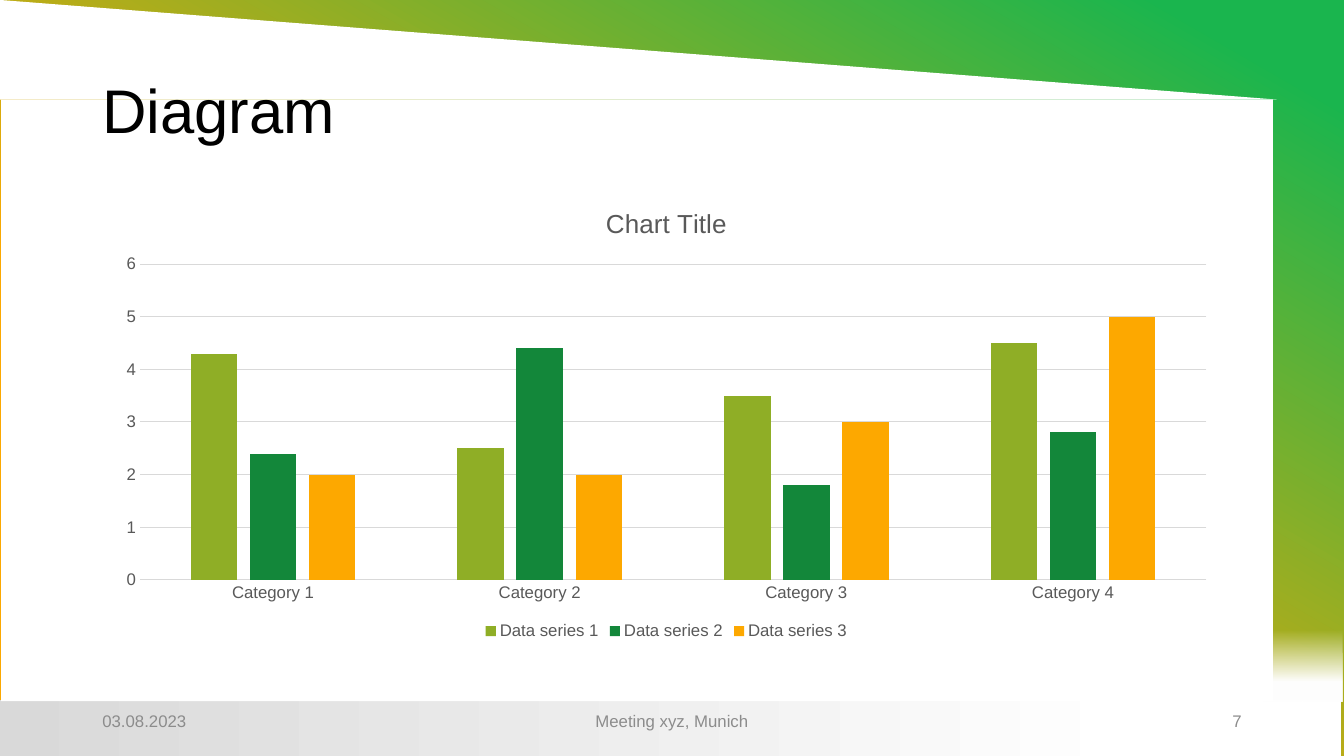
from dataclasses import dataclass
from typing import Any, Optional

import pptx
import pptx.chart.data
import pptx.dml.color
import pptx.enum.chart
import pptx.enum.shapes
import pptx.enum.text
import pptx.oxml
import pptx.oxml.ns
import pptx.util

Cm = pptx.util.Cm
Pt = pptx.util.Pt
SHAPE = pptx.enum.shapes.MSO_SHAPE
ALIGN = pptx.enum.text.PP_ALIGN
ANCHOR = pptx.enum.text.MSO_ANCHOR
CHART = pptx.enum.chart

FONT = "Arial"
CHART_GREY = "595959"
LINE_GREY = "D9D9D9"
FOOTER_GREY = "8C8C8C"


@dataclass
class Stop:
    position: float
    color: str
    alpha: Optional[int] = None


@dataclass
class Backdrop:
    """A background shape; box is left, top, width, height in cm."""
    box: tuple[float, float, float, float]
    color: str = "FFFFFF"
    kind: Any = SHAPE.RECTANGLE
    stops: tuple[Stop, ...] = ()
    angle: float = 0
    rotation: float = 0


@dataclass
class Label:
    text: str
    box: tuple[float, float, float, float]
    align: Any = ALIGN.LEFT
    size: float = 12
    color: str = FOOTER_GREY
    line_spacing: float = 1.0


@dataclass
class Series:
    name: str
    values: tuple[float, ...]
    color: str


BACKDROPS = [
    Backdrop((0, 0, 33.87, 19.05), angle=240,
             stops=(Stop(0.07, "1AB54E"), Stop(0.67, "FBA801"))),
    Backdrop((-0.03, 17.65, 33.83, 1.4),
             stops=(Stop(0, LINE_GREY), Stop(0.85, "FFFFFF"))),
    Backdrop((31.95, 15.8, 1.78, 1.98), rotation=270,
             stops=(Stop(0.28, "FFFFFF"), Stop(1, "FFFFFF", alpha=0))),
    Backdrop((0.03, 2.51, 32.05, 15.16)),
    Backdrop((0, 0, 32.18, 2.51), kind=SHAPE.RIGHT_TRIANGLE),
]

LABELS = [
    Label("Diagram", (2.33, 1.02, 29.21, 3.68), size=44, color="000000", line_spacing=0.9),
    Label("03.08.2023", (2.33, 17.65, 7.62, 1.01)),
    Label("Meeting xyz, Munich", (11.22, 17.65, 11.43, 1.01), ALIGN.CENTER),
    Label("7", (23.92, 17.65, 7.62, 1.01), ALIGN.RIGHT),
]

CHART_BOX = (2.62, 4.7, 28.35, 11.53)
CATEGORIES = [f"Category {i}" for i in range(1, 5)]
SERIES = [
    Series("Data series 1", (4.3, 2.5, 3.5, 4.5), "8FAE26"),
    Series("Data series 2", (2.4, 4.4, 1.8, 2.8), "13873A"),
    Series("Data series 3", (2, 2, 3, 5), "FDA800"),
]


def rgb(color: str) -> pptx.dml.color.RGBColor:
    return pptx.dml.color.RGBColor.from_string(color)


def set_format(target: Any, values: dict[str, Any]) -> None:
    for name, value in values.items():
        setattr(target, name, value)


def set_font(font: Any, size: float, color: str) -> None:
    set_format(font, {"name": FONT, "size": Pt(size), "bold": False})
    font.color.rgb = rgb(color)


def set_line(line: Any) -> None:
    line.color.rgb = rgb(LINE_GREY)
    line.width = Pt(0.75)


def fill_gradient(sp: Any, stops: tuple[Stop, ...], angle: float) -> None:
    sp.fill.gradient()
    sp.fill.gradient_angle = angle
    for gs, stop in zip(sp.fill.gradient_stops, stops):
        gs.position = stop.position
        gs.color.rgb = rgb(stop.color)
    colors = sp._element.spPr.iter(pptx.oxml.ns.qn("a:srgbClr"))
    for clr, stop in zip(list(colors), stops):
        if stop.alpha is not None:
            clr.append(pptx.oxml.parse_xml(
                f'<a:alpha {pptx.oxml.ns.nsdecls("a")} val="{stop.alpha * 1000}"/>'))


def add_backdrop(s: Any, item: Backdrop) -> None:
    sp = s.shapes.add_shape(item.kind, *map(Cm, item.box))
    sp.shadow.inherit = False
    sp.line.fill.background()
    sp.rotation = item.rotation
    if item.stops:
        fill_gradient(sp, item.stops, item.angle)
    else:
        sp.fill.solid()
        sp.fill.fore_color.rgb = rgb(item.color)


def add_label(s: Any, label: Label) -> None:
    tf = s.shapes.add_textbox(*map(Cm, label.box)).text_frame
    set_format(tf, {"word_wrap": True, "vertical_anchor": ANCHOR.MIDDLE})
    p = tf.paragraphs[0]
    set_format(p, {"alignment": label.align, "line_spacing": label.line_spacing})
    r = p.add_run()
    r.text = label.text
    set_font(r.font, label.size, label.color)


def add_column_chart(s: Any) -> None:
    data = pptx.chart.data.CategoryChartData()
    data.categories = CATEGORIES
    for series in SERIES:
        data.add_series(series.name, series.values)
    chart = s.shapes.add_chart(
        CHART.XL_CHART_TYPE.COLUMN_CLUSTERED, *map(Cm, CHART_BOX), data).chart
    set_font(chart.font, 10, "000000")

    chart.has_title = True
    p = chart.chart_title.text_frame.paragraphs[0]
    r = p.add_run()
    r.text = "Chart Title"
    set_font(r.font, 18.6, CHART_GREY)

    chart.has_legend = True
    set_format(chart.legend, {"position": CHART.XL_LEGEND_POSITION.BOTTOM,
                              "include_in_layout": False})
    set_font(chart.legend.font, 12, CHART_GREY)

    for axis in (chart.category_axis, chart.value_axis):
        set_format(axis, {"major_tick_mark": CHART.XL_TICK_MARK.NONE,
                          "minor_tick_mark": CHART.XL_TICK_MARK.NONE})
        set_font(axis.tick_labels.font, 12, CHART_GREY)
    set_line(chart.category_axis.format.line)
    set_format(chart.value_axis, {"minimum_scale": 0, "maximum_scale": 6, "major_unit": 1,
                                  "has_major_gridlines": True})
    chart.value_axis.format.line.fill.background()
    set_line(chart.value_axis.major_gridlines.format.line)

    plot = chart.plots[0]
    set_format(plot, {"gap_width": 219, "overlap": -27, "vary_by_categories": False})
    for column, series in zip(plot.series, SERIES):
        column.format.fill.solid()
        column.format.fill.fore_color.rgb = rgb(series.color)


def main() -> None:
    prs = pptx.Presentation()
    set_format(prs, {"slide_width": Cm(33.87), "slide_height": Cm(19.05)})
    s = prs.slides.add_slide(prs.slide_layouts[6])
    for item in BACKDROPS:
        add_backdrop(s, item)
    for label in LABELS:
        add_label(s, label)
    add_column_chart(s)
    prs.save("out.pptx")


if __name__ == "__main__":
    main()
